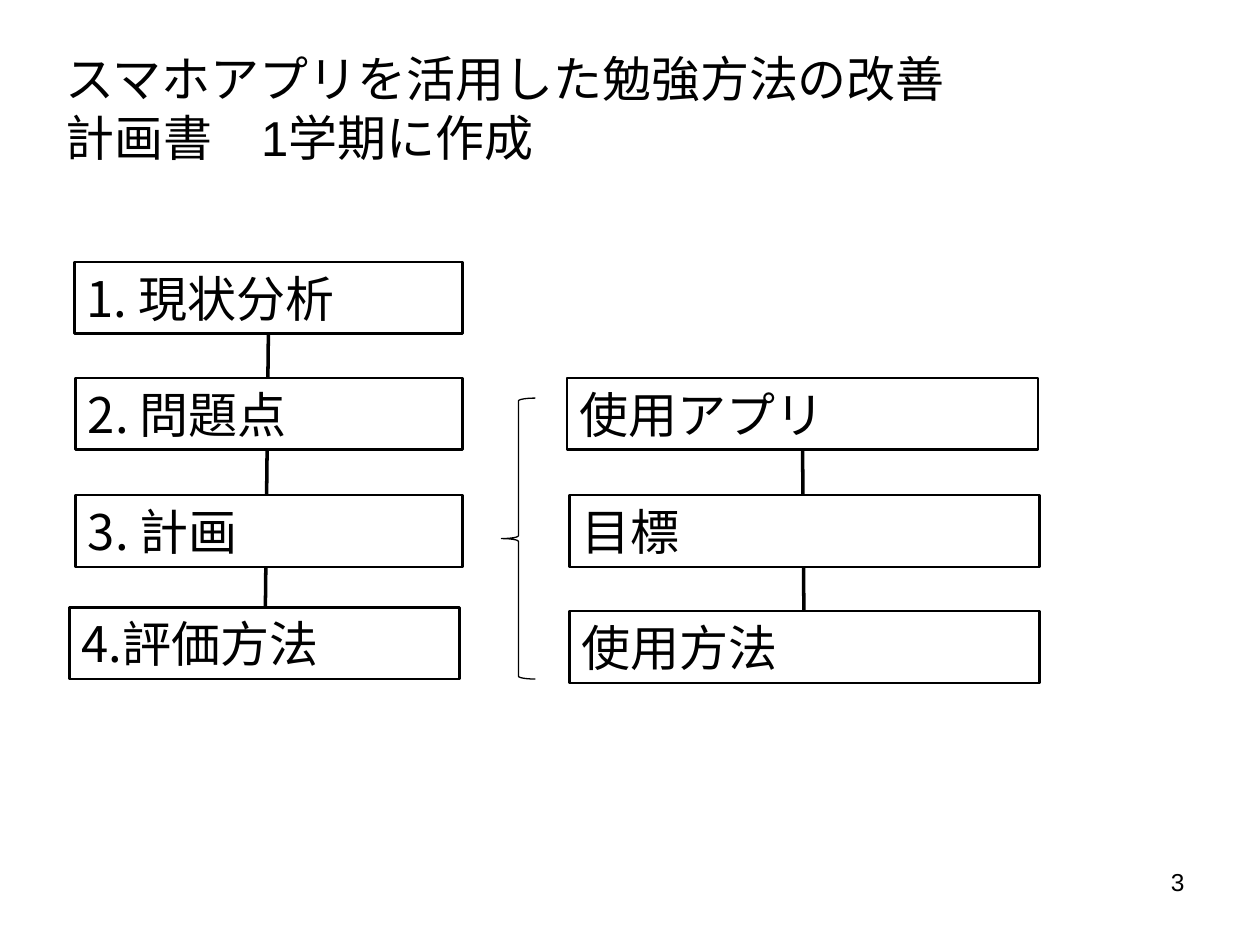
from lxml import etree
from pptx import Presentation
from pptx.dml.color import RGBColor
from pptx.enum.shapes import MSO_CONNECTOR, MSO_SHAPE
from pptx.enum.text import MSO_ANCHOR, MSO_AUTO_SIZE, PP_ALIGN
from pptx.oxml.ns import qn
from pptx.util import Inches, Pt

BLACK = RGBColor(0, 0, 0)
WHITE = RGBColor(255, 255, 255)
LATIN_FONT = "Arial"
JAPANESE_FONT = "Noto Sans CJK JP"
STRAIGHT = MSO_CONNECTOR.STRAIGHT
RECTANGLE = MSO_SHAPE.RECTANGLE
LEFT_BRACE = MSO_SHAPE.LEFT_BRACE
TOP, MIDDLE, BOTTOM = MSO_ANCHOR.TOP, MSO_ANCHOR.MIDDLE, MSO_ANCHOR.BOTTOM
LEFT, RIGHT = PP_ALIGN.LEFT, PP_ALIGN.RIGHT
NO_AUTOFIT = MSO_AUTO_SIZE.NONE
BOTTOM_SITE = 2
STEP_HEIGHT = 0.57


def write_text(shape, text, size=28, font=LATIN_FONT, align=LEFT, anchor=TOP):
    frame = shape.text_frame
    frame.text = text
    frame.word_wrap = True
    frame.auto_size = NO_AUTOFIT
    frame.vertical_anchor = anchor
    for paragraph in frame.paragraphs:
        paragraph.alignment = align
        for run in paragraph.runs:
            run.font.size = Pt(size)
            run.font.name = font
            run.font.color.rgb = BLACK
            east_asian = etree.SubElement(run.font._element, qn("a:ea"))
            east_asian.set("typeface", JAPANESE_FONT)


def box_inches(box):
    return [Inches(length) for length in box]


def add_title(slide, box, text):
    title = slide.shapes.title
    title.left, title.top, title.width, title.height = box_inches(box)
    write_text(title, text, anchor=BOTTOM)


def add_step(slide, box, text):
    step = slide.shapes.add_shape(RECTANGLE, *box_inches(box))
    step.shadow.inherit = False
    step.fill.solid()
    step.fill.fore_color.rgb = WHITE
    step.line.color.rgb = BLACK
    step.line.width = Pt(1.5)
    write_text(step, text, font=JAPANESE_FONT, anchor=MIDDLE)
    return step


def add_step_column(slide, steps):
    spine = slide.shapes.add_connector(STRAIGHT, 0, 0, 0, 0)
    spine.line.color.rgb = BLACK
    spine.line.width = Pt(2)
    etree.SubElement(spine._element.spPr, qn("a:effectLst"))
    boxes = [
        add_step(slide, (left, top, width, STEP_HEIGHT), text)
        for text, left, top, width in steps
    ]
    spine.begin_connect(boxes[0], BOTTOM_SITE)
    spine.end_connect(boxes[-1], BOTTOM_SITE)


def add_brace(slide, box):
    brace = slide.shapes.add_shape(LEFT_BRACE, *box_inches(box))
    brace.shadow.inherit = False
    brace.fill.background()
    brace.line.color.rgb = BLACK
    brace.line.width = Pt(0.75)


def add_page_number(slide, box, number):
    page_number = slide.shapes.add_textbox(*box_inches(box))
    write_text(page_number, number, size=14, align=RIGHT)


def main():
    presentation = Presentation()
    presentation.slide_width = Inches(10)
    presentation.slide_height = Inches(7.5)
    slide = presentation.slides.add_slide(presentation.slide_layouts[5])

    add_page_number(slide, (7.17, 6.83, 2.33, 0.52), "3")
    add_title(
        slide,
        (0.42, 0.3, 8.5, 1.07),
        "スマホアプリを活用した勉強方法の改善\v計画書　1学期に作成",
    )
    add_step_column(slide, [
        ("1. 現状分析", 0.59, 2.08, 3.08),
        ("2. 問題点", 0.6, 3, 3.07),
        ("3. 計画", 0.6, 3.93, 3.07),
        ("4.評価方法", 0.55, 4.82, 3.1),
    ])
    add_step_column(slide, [
        ("使用アプリ", 4.5, 3, 3.74),
        ("目標", 4.52, 3.93, 3.73),
        ("使用方法", 4.52, 4.85, 3.73),
    ])
    add_brace(slide, (3.98, 3.16, 0.27, 2.23))
    presentation.save("out.pptx")


if __name__ == "__main__":
    main()
